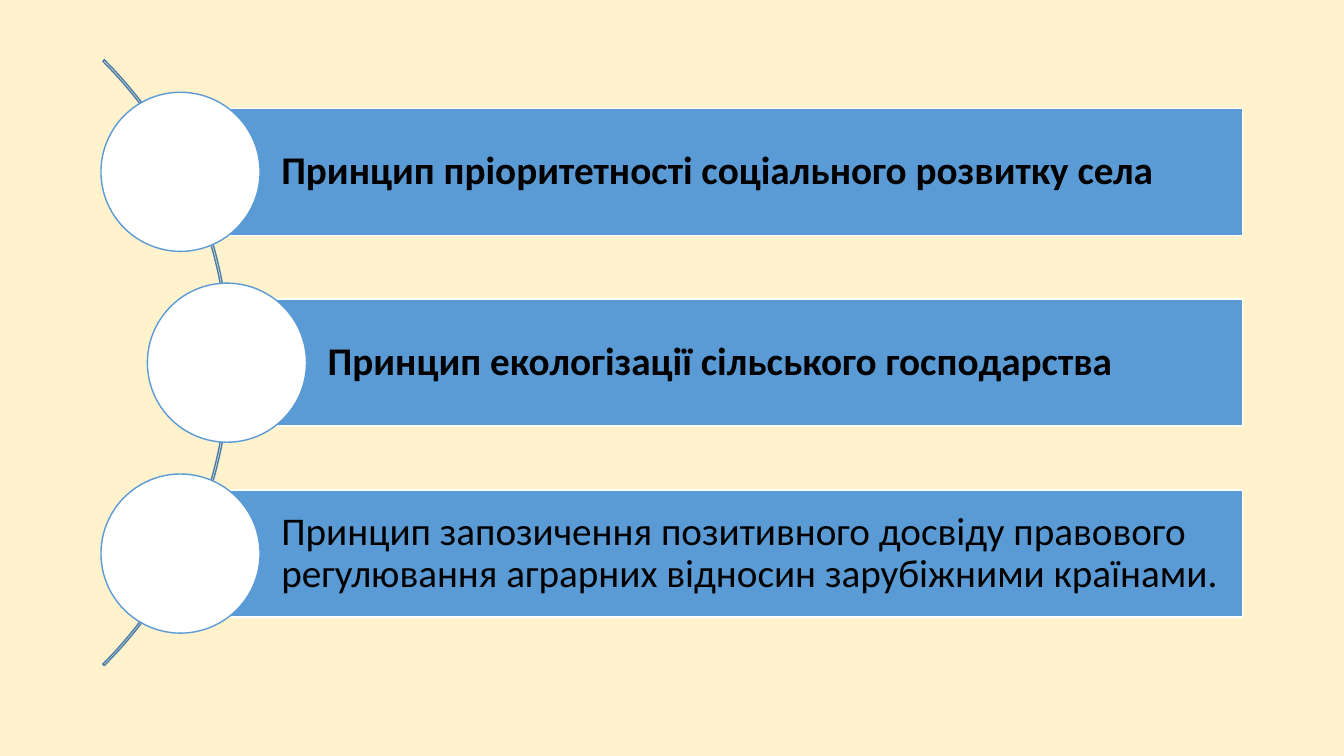
from pptx import Presentation
from pptx.dml.color import RGBColor
from pptx.enum.shapes import MSO_SHAPE as Shape
from pptx.enum.text import MSO_ANCHOR as Anchor, PP_ALIGN as Align
from pptx.util import Cm, Pt

CREAM = RGBColor(0xFF, 0xF2, 0xCC)
BLUE = RGBColor(0x5B, 0x9B, 0xD5)
DARK_BLUE = RGBColor(0x49, 0x7C, 0xAB)
WHITE = RGBColor(0xFF, 0xFF, 0xFF)
BLACK = RGBColor(0x00, 0x00, 0x00)

# Text, centre of the circle from the left (cm), bold
PRINCIPLES = [
    ("Принцип пріоритетності соціального розвитку села", 4.55, True),
    ("Принцип екологізації сільського господарства", 5.72, True),
    ("Принцип запозичення позитивного досвіду правового регулювання "
     "аграрних відносин зарубіжними країнами.", 4.55, False),
]
MIDDLE_Y = 9.14
ROW_PITCH = 4.81
BAR_RIGHT = 31.32
BAR_HEIGHT = 3.2
CIRCLE_SIZE = 4.01
ARC_LEFT = -15.8
ARC_SIZE = 21.59


def add_outlined(slide, kind, left, middle, width, height, line, fill=None):
    """Add a preset shape centred vertically on middle; lengths in cm."""
    shape = slide.shapes.add_shape(
        kind, Cm(left), Cm(middle - height / 2), Cm(width), Cm(height))
    shape.shadow.inherit = False
    if fill is None:
        shape.fill.background()
    else:
        shape.fill.solid()
        shape.fill.fore_color.rgb = fill
    shape.line.color.rgb = line
    shape.line.width = Pt(1)
    return shape


def write_text(shape, text, size=28, bold=False, color=BLACK):
    frame = shape.text_frame
    frame.word_wrap = True
    frame.vertical_anchor = Anchor.MIDDLE
    frame.margin_left = Cm(2.54)
    frame.margin_right = frame.margin_top = frame.margin_bottom = Cm(0.2)
    paragraph = frame.paragraphs[0]
    paragraph.alignment = Align.LEFT
    paragraph.line_spacing = 0.9
    run = paragraph.add_run()
    run.text = text
    run.font.name = "Calibri"
    run.font.size = Pt(size)
    run.font.bold = bold
    run.font.color.rgb = color


def add_arc(slide):
    arc = add_outlined(slide, Shape.BLOCK_ARC, ARC_LEFT, MIDDLE_Y,
                       ARC_SIZE, ARC_SIZE, DARK_BLUE)
    for index, value in enumerate((189, 27, 0.0025)):
        arc.adjustments[index] = value


def add_principle(slide, text, center_x, center_y, bold):
    bar = add_outlined(slide, Shape.RECTANGLE, center_x, center_y,
                       BAR_RIGHT - center_x, BAR_HEIGHT, WHITE, BLUE)
    write_text(bar, text, bold=bold)
    add_outlined(slide, Shape.OVAL, center_x - CIRCLE_SIZE / 2, center_y,
                 CIRCLE_SIZE, CIRCLE_SIZE, BLUE, WHITE)


def main():
    presentation = Presentation()
    presentation.slide_width = Cm(33.87)
    presentation.slide_height = Cm(19.05)
    slide = presentation.slides.add_slide(presentation.slide_layouts[6])
    slide.background.fill.solid()
    slide.background.fill.fore_color.rgb = CREAM

    add_arc(slide)
    for row, (text, center_x, bold) in enumerate(PRINCIPLES):
        center_y = MIDDLE_Y + (row - 1) * ROW_PITCH
        add_principle(slide, text, center_x, center_y, bold)

    presentation.save("out.pptx")


if __name__ == "__main__":
    main()
